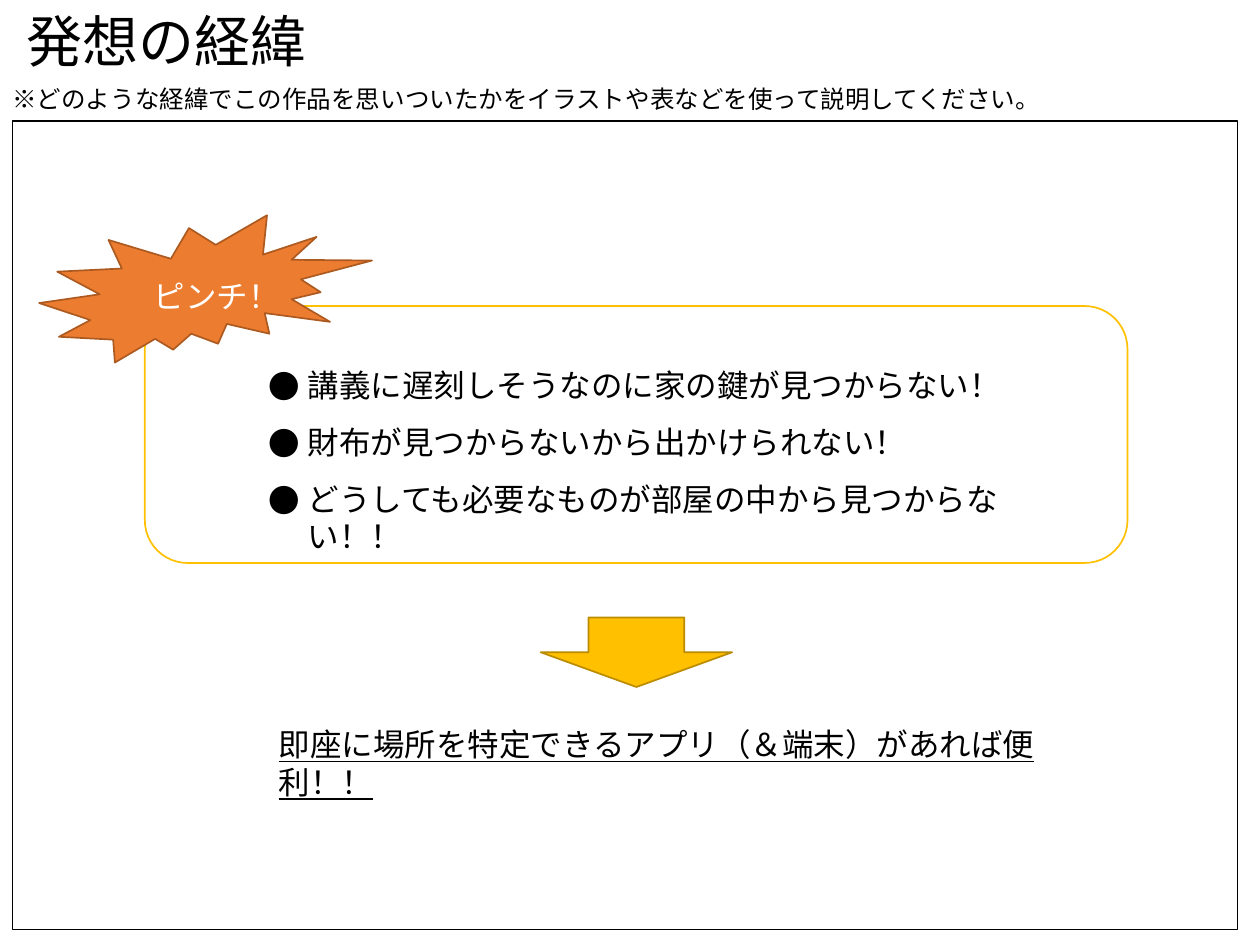
from dataclasses import dataclass
from typing import Optional

from lxml.etree import SubElement
from pptx import Presentation
from pptx.dml.color import RGBColor as Rgb
from pptx.enum.shapes import MSO_SHAPE as Preset
from pptx.oxml.ns import qn
from pptx.util import Cm, Pt


@dataclass(frozen=True)
class Theme:
    black: Rgb = Rgb(0, 0, 0)
    white: Rgb = Rgb(255, 255, 255)
    orange: Rgb = Rgb(0xEC, 0x7C, 0x30)
    dark_orange: Rgb = Rgb(0xAD, 0x5A, 0x20)
    gold: Rgb = Rgb(0xFF, 0xC0, 0x00)
    dark_gold: Rgb = Rgb(0xBB, 0x8B, 0x00)
    heading_font: str = "Calibri"
    body_font: str = "Noto Sans CJK JP"
    title_size: float = 32
    note_size: float = 14
    body_size: float = 18
    body_leading: float = 21.4
    bullet_gap: float = 11
    outline: float = 0.96


THEME = Theme()


@dataclass(frozen=True)
class Area:
    left: float
    top: float
    width: float
    height: float

    def lengths(self) -> tuple:
        return Cm(self.left), Cm(self.top), Cm(self.width), Cm(self.height)


@dataclass(frozen=True)
class Figure:
    preset: Preset
    area: Area
    line: Rgb
    fill: Optional[Rgb] = None


@dataclass(frozen=True)
class Caption:
    lines: tuple
    area: Area
    size: float = THEME.body_size
    font: str = THEME.body_font
    color: Rgb = THEME.black
    leading: Optional[float] = THEME.body_leading
    margins: tuple = (0, 0)
    underline: bool = False
    bulleted: bool = False


FIGURES = (
    Figure(Preset.RECTANGLE, Area(0.25, 2.44, 24.7, 16.3), THEME.black),
    Figure(Preset.ROUNDED_RECTANGLE, Area(2.92, 6.17, 19.81, 5.18), THEME.gold),
    Figure(Preset.EXPLOSION2, Area(0.79, 4.34, 6.71, 2.97), THEME.dark_orange, THEME.orange),
    Figure(Preset.DOWN_ARROW, Area(10.9, 12.45, 3.86, 1.4), THEME.dark_gold, THEME.gold),
)

CAPTIONS = (
    Caption(("ピンチ！",), Area(3.1, 5.6, 3, 0.8), color=THEME.white),
    Caption(
        (
            "講義に遅刻しそうなのに家の鍵が見つからない！",
            "財布が見つからないから出かけられない！",
            "どうしても必要なものが部屋の中から見つからない！！",
        ),
        Area(3.1, 7.39, 17.88, 3.8),
        bulleted=True,
    ),
    Caption(
        ("即座に場所を特定できるアプリ（＆端末）があれば便利！！",),
        Area(5.62, 14.63, 15.85, 1.6),
        underline=True,
    ),
    Caption(
        ("発想の経緯",), Area(0.28, 0, 6.22, 1.63),
        THEME.title_size, THEME.heading_font, leading=None, margins=(0.25, 0.13),
    ),
    Caption(
        ("※どのような経緯でこの作品を思いついたかをイラストや表などを使って説明してください。",),
        Area(0, 1.57, 24.54, 0.86),
        THEME.note_size, THEME.heading_font, leading=None, margins=(0.25, 0.13),
    ),
)


def draw_figure(page, figure: Figure) -> None:
    shape = page.shapes.add_shape(figure.preset, *figure.area.lengths())
    shape.shadow.inherit = False
    shape.line.color.rgb = figure.line
    shape.line.width = Pt(THEME.outline)
    if figure.fill is None:
        shape.fill.background()
    else:
        shape.fill.solid()
        shape.fill.fore_color.rgb = figure.fill


def add_bullet(para) -> None:
    para.space_after = Pt(THEME.bullet_gap)
    properties = para._p.get_or_add_pPr()
    properties.set("marL", str(Cm(3.1)))
    properties.set("indent", str(Cm(-0.79)))
    SubElement(properties, qn("a:buFont"), typeface=THEME.body_font)
    SubElement(properties, qn("a:buChar"), char="●")


def draw_caption(page, caption: Caption) -> None:
    frame = page.shapes.add_textbox(*caption.area.lengths()).text_frame
    frame.word_wrap = True
    side, edge = caption.margins
    frame.margin_left = frame.margin_right = Cm(side)
    frame.margin_top = frame.margin_bottom = Cm(edge)
    frame.text = "\n".join(caption.lines)
    for para in frame.paragraphs:
        if caption.leading is not None:
            para.line_spacing = Pt(caption.leading)
        if caption.bulleted:
            add_bullet(para)
        for span in para.runs:
            font = span.font
            font.size = Pt(caption.size)
            font.color.rgb = caption.color
            font.underline = caption.underline
            font.name = caption.font
            SubElement(span._r.get_or_add_rPr(), qn("a:ea"), typeface=caption.font)


def main() -> None:
    deck = Presentation()
    deck.slide_width, deck.slide_height = Cm(25.4), Cm(19.05)
    page = deck.slides.add_slide(deck.slide_layouts[6])
    for figure in FIGURES:
        draw_figure(page, figure)
    for caption in CAPTIONS:
        draw_caption(page, caption)
    deck.save("out.pptx")


if __name__ == "__main__":
    main()
